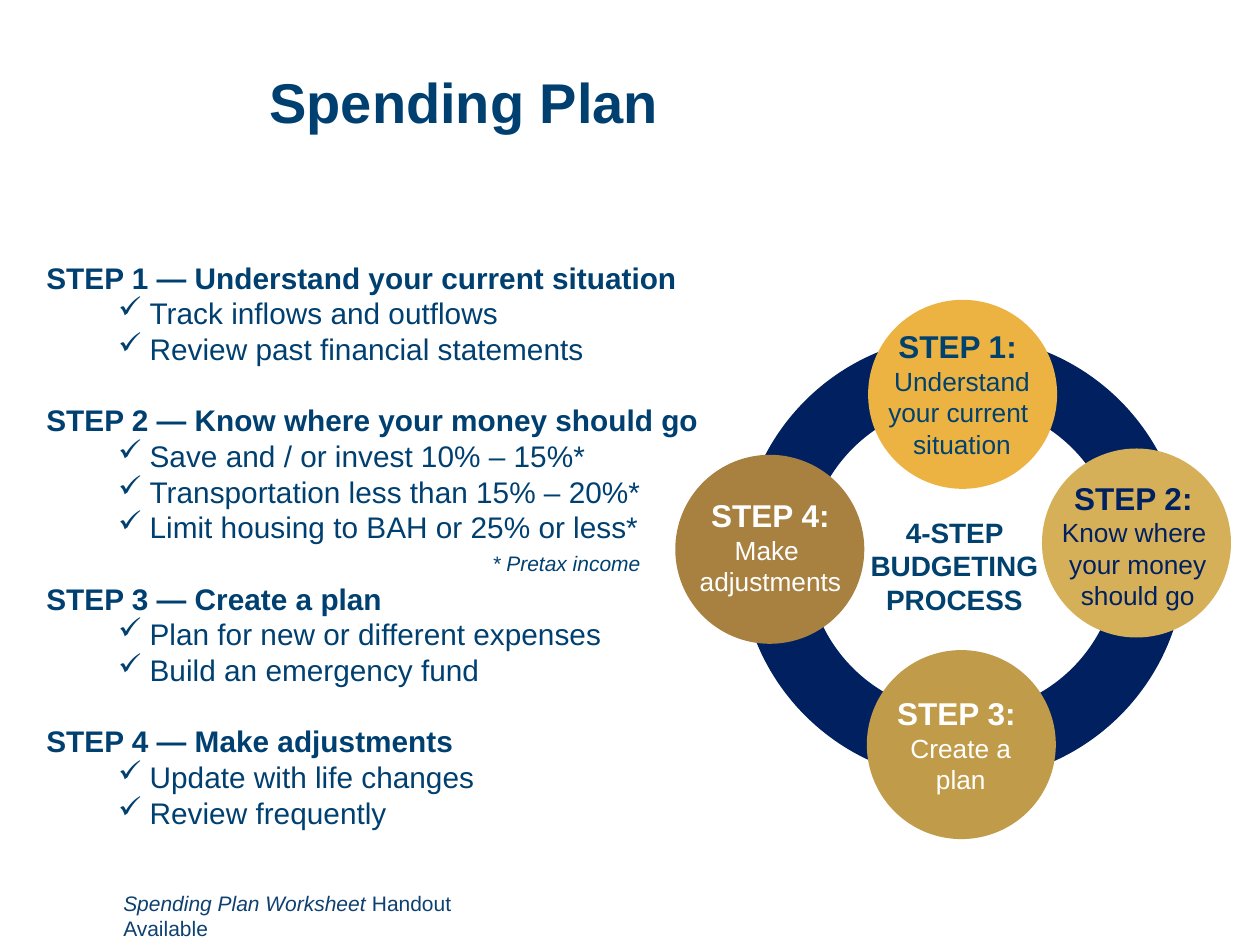
from lxml import etree
from pptx import Presentation
from pptx import util as u
from pptx.dml.color import RGBColor
from pptx.enum import shapes, text
from pptx.oxml.ns import qn


class Theme:
    font = "Arial"
    navy, ring = "004071", "002060"
    center, note, white = "01416E", "0E4071", "FFFFFF"
    title, body, small = 32, 17, 12
    hub, step, detail = 16, 18, 15
    leading = 1.2


deck = Presentation()
deck.slide_width, deck.slide_height = u.Inches(10), u.Inches(7.5)
slide = deck.slides.add_slide(deck.slide_layouts[6])
COL, ROW = deck.slide_width / 100, deck.slide_height / 75


def add_box(left, top, width, height):
    """Add a wrapping text frame, placed in grid columns and rows."""
    frame = slide.shapes.add_textbox(
        int(left * COL), int(top * ROW), int(width * COL), int(height * ROW)).text_frame
    frame.word_wrap = True
    return frame


def write(frame, lines, color, align=text.PP_ALIGN.LEFT):
    """Fill a frame with (wording, size, bold) lines and return its paragraphs."""
    frame.text = "\n".join(wording for wording, _, _ in lines)
    for paragraph, (_, size, bold) in zip(frame.paragraphs, lines):
        paragraph.alignment = align
        paragraph.line_spacing = u.Pt(size * Theme.leading)
        for run in paragraph.runs:
            run.font.name, run.font.size, run.font.bold = Theme.font, u.Pt(size), bold
            run.font.color.rgb = RGBColor.from_string(color)
    return frame.paragraphs


# Title
title = add_box(20.4, 1.1, 72.6, 14.5)
title.vertical_anchor = text.MSO_ANCHOR.MIDDLE
write(title, [("Spending Plan", Theme.title, True)], Theme.navy)[0].line_spacing = 0.9

# Checklist of the four steps
checklist = [
    ("STEP 1 — Understand your current situation",
     ["Track inflows and outflows", "Review past financial statements"]),
    ("STEP 2 — Know where your money should go",
     ["Save and / or invest 10% – 15%*", "Transportation less than 15% – 20%*",
      "Limit housing to BAH or 25% or less*"]),
    ("STEP 3 — Create a plan",
     ["Plan for new or different expenses", "Build an emergency fund"]),
    ("STEP 4 — Make adjustments",
     ["Update with life changes", "Review frequently"]),
]
lines = []
for heading, actions in checklist:
    lines.append((heading, Theme.body, True))
    lines += [(action, Theme.body, False) for action in actions]

entries = write(add_box(2.6, 20.1, 56.7, 47.6), lines, Theme.navy)
for number, (entry, (_, size, is_heading)) in enumerate(zip(entries, lines)):
    properties = entry._p.get_or_add_pPr()
    if is_heading:
        properties.set("marL", str(int(0.1 * COL)))
        if number:
            entry.space_before = u.Pt(size * Theme.leading)
    else:
        entry.level = 1
        properties.set("marL", str(int(8.3 * COL)))
        properties.set("indent", str(int(-2.5 * COL)))
        etree.SubElement(properties, qn("a:buChar")).set("char", "✓")

pretax = write(add_box(33, 43.2, 20.6, 3.8),
               [("* Pretax income", Theme.small, False)], Theme.navy)[0]
pretax._p.get_or_add_pPr().set("marL", str(int(5.1 * COL)))
pretax.runs[0].font.italic = True

# Budgeting cycle: the ring, then one disc per step
ring = slide.shapes.add_shape(shapes.MSO_SHAPE.OVAL, int(61.4 * COL), int(29.3 * ROW),
                              int(30 * COL), int(30 * ROW))
ring.shadow.inherit = False
ring.fill.background()
ring.line.color.rgb = RGBColor.from_string(Theme.ring)
ring.line.width = u.Pt(38.5)

# Disc left and top, disc colour, label left and top, label colour, wording
steps = [
    (68.9, 23.8, "ECB342", 69.15, 25.5, Theme.center,
     ["STEP 1: ", "Understand your current ", "situation"]),
    (82.7, 35.6, "D6B059", 83.1, 37.5, Theme.ring,
     ["STEP 2: ", "Know where ", "your money", "should go"]),
    (68.8, 51.6, "C09B49", 69.05, 54.6, Theme.white,
     ["STEP 3: ", "Create a plan"]),
    (53.6, 36.1, "A88140", 53.95, 38.9, Theme.white,
     ["STEP 4:", "Make ", "adjustments"]),
]
for left, top, fill, label_left, label_top, color, (name, *details) in steps:
    disc = slide.shapes.add_shape(shapes.MSO_SHAPE.OVAL, int(left * COL), int(top * ROW),
                                  int(15 * COL), int(15 * ROW))
    disc.shadow.inherit = False
    disc.fill.solid()
    disc.fill.fore_color.rgb = RGBColor.from_string(fill)
    disc.line.fill.background()
    write(add_box(label_left, label_top, 14.4, 11.6),
          [(name, Theme.step, True)] + [(line, Theme.detail, False) for line in details],
          color, text.PP_ALIGN.CENTER)

write(add_box(66.6, 40.4, 18.3, 9.1),
      [("4-STEP BUDGETING", Theme.hub, True), ("PROCESS", Theme.hub, True)],
      Theme.center, text.PP_ALIGN.CENTER)

# Handout note
handout = write(add_box(8.8, 70.2, 35.1, 3),
                [("Spending Plan Worksheet", Theme.small, False)], Theme.note)[0]
handout.runs[0].font.italic = True
available = handout.add_run()
available.text = " Handout Available"
available.font.name, available.font.size = Theme.font, u.Pt(Theme.small)
available.font.color.rgb = RGBColor.from_string(Theme.note)

deck.save("out.pptx")
